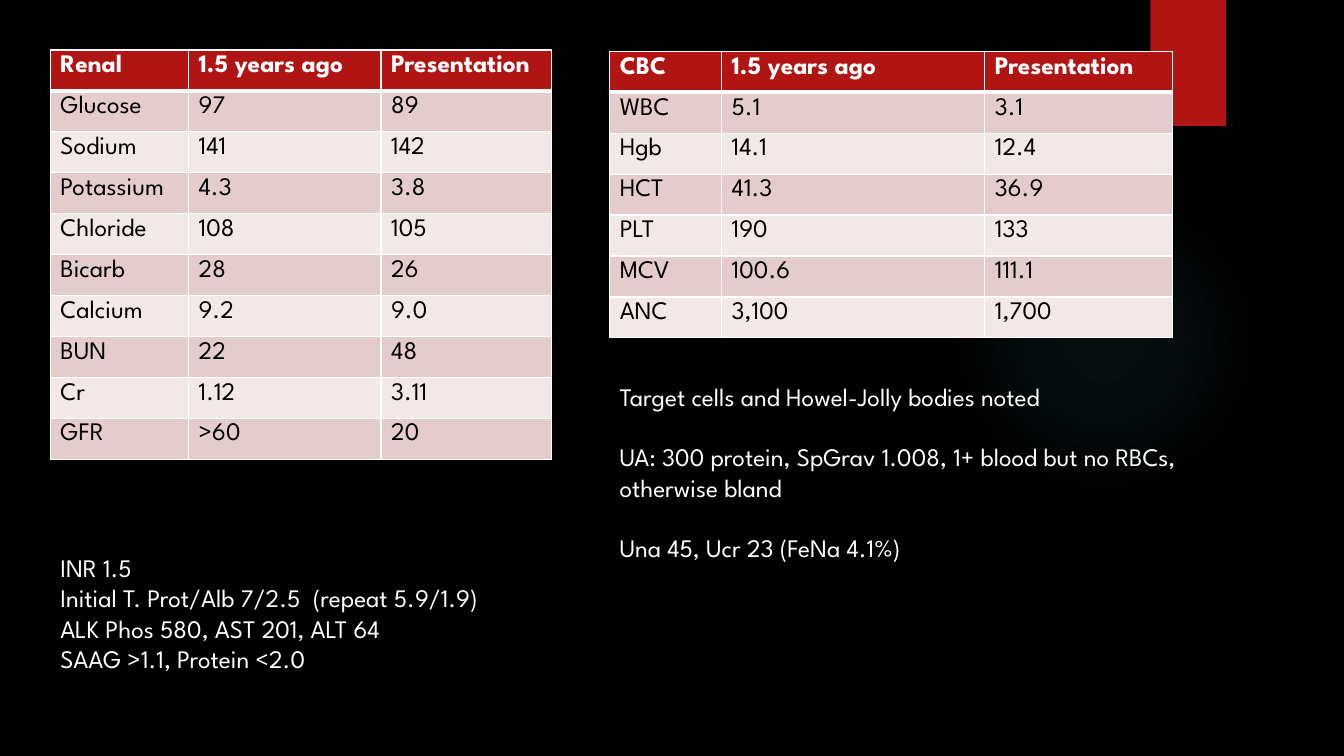
from lxml import etree
from pptx import Presentation
from pptx.dml.color import RGBColor
from pptx.enum.shapes import MSO_SHAPE
from pptx.oxml import parse_xml
from pptx.oxml.ns import qn
from pptx.util import Pt

RECTANGLE = MSO_SHAPE.RECTANGLE
OVAL = MSO_SHAPE.OVAL
FONT = "League Spartan"
RED, WHITE, BLACK, TEAL = "B01513", "FFFFFF", "000000", "50B9C1"
BANDS = ("E4CCCC", "F2E8E7")
ROW_HEIGHT = 29.25
LINE_HEIGHT = 21.6
NAMESPACE = "http://schemas.openxmlformats.org/drawingml/2006/main"

RENAL = [
    ("Renal", "1.5 years ago", "Presentation"),
    ("Glucose", "97", "89"),
    ("Sodium", "141", "142"),
    ("Potassium", "4.3", "3.8"),
    ("Chloride", "108", "105"),
    ("Bicarb", "28", "26"),
    ("Calcium", "9.2", "9.0"),
    ("BUN", "22", "48"),
    ("Cr", "1.12", "3.11"),
    ("GFR", ">60", "20"),
]
BLOOD_COUNT = [
    ("CBC", "1.5 years ago", "Presentation"),
    ("WBC", "5.1", "3.1"),
    ("Hgb", "14.1", "12.4"),
    ("HCT", "41.3", "36.9"),
    ("PLT", "190", "133"),
    ("MCV", "100.6", "111.1"),
    ("ANC", "3,100", "1,700"),
]
LIVER_NOTES = [
    "INR 1.5",
    "Initial T. Prot/Alb 7/2.5  (repeat 5.9/1.9)",
    "ALK Phos 580, AST 201, ALT 64",
    "SAAG >1.1, Protein <2.0",
]
URINE_NOTES = [
    "Target cells and Howel-Jolly bodies noted",
    "UA: 300 protein, SpGrav 1.008, 1+ blood but no RBCs, otherwise bland",
    "Una 45, Ucr 23 (FeNa 4.1%)",
]


def rgb(color):
    """Turn a hex string into a colour."""
    return RGBColor.from_string(color)


def style_paragraph(paragraph, color, bold=False):
    """Set the slide's font on a paragraph."""
    font = paragraph.font
    font.name = FONT
    font.size = Pt(18)
    font.bold = bold
    font.color.rgb = rgb(color)


def add_plain_shape(slide, kind, left, top, width, height, color):
    """Add a filled shape without line or shadow."""
    shape = slide.shapes.add_shape(kind, Pt(left), Pt(top), Pt(width), Pt(height))
    shape.shadow.inherit = False
    shape.fill.solid()
    shape.fill.fore_color.rgb = rgb(color)
    shape.line.fill.background()
    return shape


def add_glow(slide, left, top, size, color):
    """Add a faint circle that fades out from its centre."""
    shape = add_plain_shape(slide, OVAL, left, top, size, size, color)
    stops = "".join(
        f'<a:gs pos="{position}000"><a:srgbClr val="{color}">'
        f'<a:alpha val="{opacity}000"/></a:srgbClr></a:gs>'
        for position, opacity in ((0, 7), (36, 6), (69, 0), (100, 0))
    )
    gradient = parse_xml(
        f'<a:gradFill xmlns:a="{NAMESPACE}"><a:gsLst>{stops}</a:gsLst>'
        '<a:path path="circle"><a:fillToRect l="50000" t="50000" r="50000" b="50000"/>'
        "</a:path></a:gradFill>"
    )
    properties = shape.element.spPr
    properties.replace(properties.find(qn("a:solidFill")), gradient)


def add_border(cell, side, width, color):
    """Draw one side of a cell's border."""
    line = etree.SubElement(cell._tc.get_or_add_tcPr(), qn(f"a:ln{side}"), w=str(Pt(width)))
    fill = etree.SubElement(line, qn("a:solidFill"))
    etree.SubElement(fill, qn("a:srgbClr"), val=color)


def style_cell(cell, text, row_index):
    """Write and format a header or banded body cell."""
    header = row_index == 0
    cell.text = text
    style_paragraph(cell.text_frame.paragraphs[0], WHITE if header else BLACK, header)
    widths = {"L": 1, "R": 1, "T": 3 if row_index == 1 else 1, "B": 3 if header else 1}
    for side, width in widths.items():
        add_border(cell, side, width, WHITE)
    cell.fill.solid()
    cell.fill.fore_color.rgb = rgb(RED if header else BANDS[(row_index - 1) % 2])


def add_lab_table(slide, left, top, column_widths, rows):
    """Add a table of lab values with a red header."""
    frame = slide.shapes.add_table(
        len(rows), len(column_widths), Pt(left), Pt(top),
        Pt(sum(column_widths)), Pt(ROW_HEIGHT * len(rows)),
    )
    table = frame.table
    for column, width in zip(table.columns, column_widths):
        column.width = Pt(width)
    for row_index, values in enumerate(rows):
        table.rows[row_index].height = Pt(ROW_HEIGHT)
        for column_index, text in enumerate(values):
            style_cell(table.cell(row_index, column_index), text, row_index)


def add_notes(slide, left, top, width, height, lines, gap=0):
    """Add a text box with one paragraph per line."""
    box = slide.shapes.add_textbox(Pt(left), Pt(top), Pt(width), Pt(height))
    text_frame = box.text_frame
    text_frame.word_wrap = True
    for index, line in enumerate(lines):
        paragraph = text_frame.add_paragraph() if index else text_frame.paragraphs[0]
        paragraph.text = line
        paragraph.space_before = Pt(gap if index else 0)
        style_paragraph(paragraph, WHITE)


def main():
    """Build the lab results slide."""
    presentation = Presentation()
    presentation.slide_width = Pt(960)
    presentation.slide_height = Pt(540)
    slide = presentation.slides.add_slide(presentation.slide_layouts.get_by_name("Blank"))
    slide.background.fill.solid()
    slide.background.fill.fore_color.rgb = rgb(BLACK)
    add_glow(slide, 677.5, 131.8, 221.8, TEAL)
    add_plain_shape(slide, RECTANGLE, 821.8, 0, 54, 90, RED)
    add_lab_table(slide, 36, 35.75, (98.75, 137.5, 121.5), RENAL)
    add_lab_table(slide, 435.5, 36.75, (80, 188, 134), BLOOD_COUNT)
    add_notes(slide, 36, 391, 349, 94, LIVER_NOTES)
    add_notes(slide, 435.5, 268.75, 451.5, 160, URINE_NOTES, LINE_HEIGHT)
    presentation.save("out.pptx")


if __name__ == "__main__":
    main()
